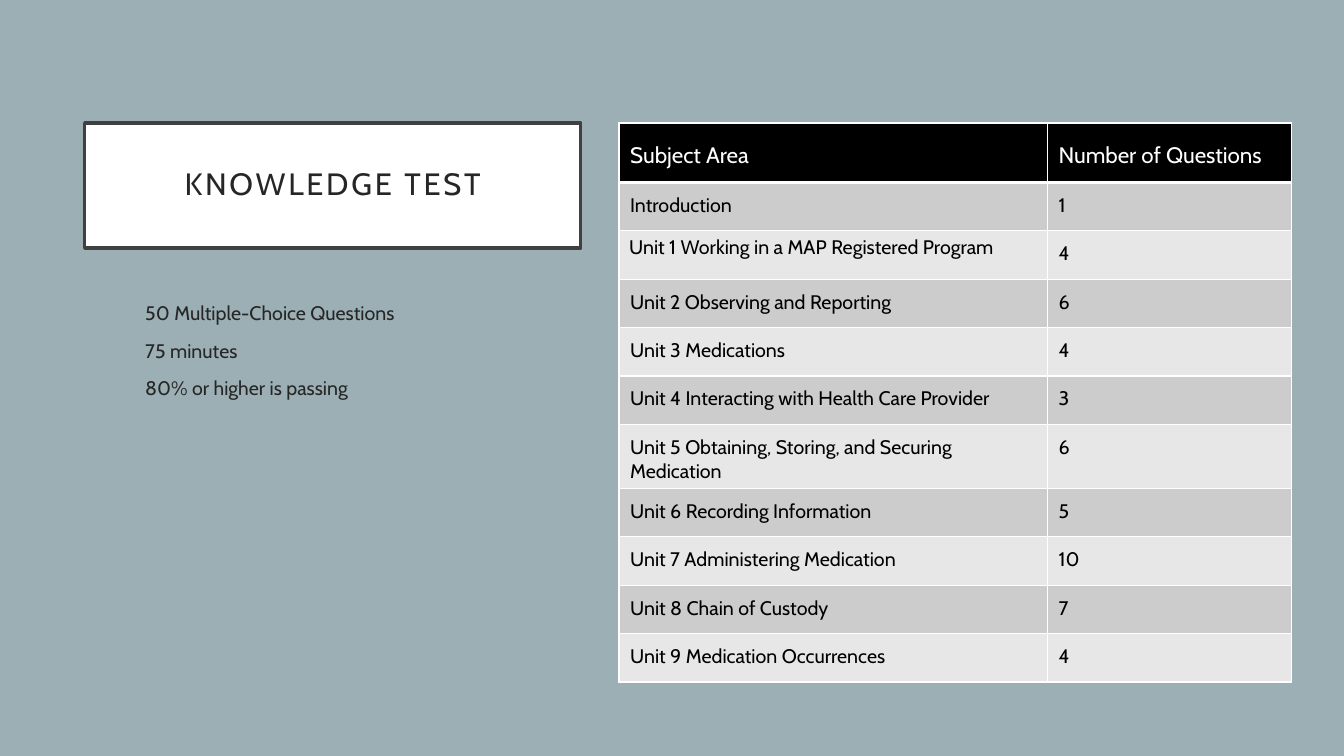
from dataclasses import dataclass

from lxml import etree
from pptx import Presentation
from pptx.dml.color import RGBColor
from pptx.enum import shapes, text
from pptx.oxml.ns import qn
from pptx.util import Inches, Pt


@dataclass(frozen=True)
class Theme:
    font: str = "Cabin"
    background: str = "9BAFB5"
    ink: str = "262626"
    frame: str = "404040"
    white: str = "FFFFFF"
    black: str = "000000"
    bands: tuple = ("CCCCCC", "E7E7E7")
    title_size: int = 22
    header_size: int = 16
    body_size: int = 14


theme = Theme()


def write(frame, lines, size, color, align=text.PP_ALIGN.LEFT,
          line_spacing=1.0, gap=0, tracking=0):
    """Fill a text frame; gap and tracking are in points."""
    frame.word_wrap = True
    for index, line in enumerate(lines):
        para = frame.paragraphs[0] if index == 0 else frame.add_paragraph()
        para.alignment = align
        para.line_spacing = line_spacing
        if index:
            para.space_before = Pt(gap)
        span = para.add_run()
        span.text = line
        span.font.name = theme.font
        span.font.size = Pt(size)
        span.font.bold = False
        span.font.color.rgb = RGBColor.from_string(color)
        if tracking:
            span._r.get_or_add_rPr().set("spc", str(tracking * 100))


def set_borders(cell, widths):
    """Draw white cell borders; widths maps L, R, T, B to points."""
    properties = cell._tc.get_or_add_tcPr()
    for side, width in widths.items():
        line = etree.SubElement(properties, qn(f"a:ln{side}"), w=str(Pt(width)))
        fill = etree.SubElement(line, qn("a:solidFill"))
        etree.SubElement(fill, qn("a:srgbClr"), val=theme.white)


deck = Presentation()
deck.slide_width = Inches(13.33)
deck.slide_height = Inches(7.5)
page = deck.slides.add_slide(deck.slide_layouts[6])
page.background.fill.solid()
page.background.fill.fore_color.rgb = RGBColor.from_string(theme.background)

# Title
title = page.shapes.add_shape(shapes.MSO_SHAPE.RECTANGLE, Inches(0.84),
                              Inches(1.22), Inches(4.92), Inches(1.24))
title.shadow.inherit = False
title.fill.solid()
title.fill.fore_color.rgb = RGBColor.from_string(theme.white)
title.line.color.rgb = RGBColor.from_string(theme.frame)
title.line.width = Pt(2.5)
frame = title.text_frame
frame.vertical_anchor = text.MSO_ANCHOR.MIDDLE
frame.margin_left = frame.margin_right = Inches(0.3)
frame.margin_top = frame.margin_bottom = Inches(0.2)
write(frame, ["KNOWLEDGE TEST"], theme.title_size, theme.ink,
      align=text.PP_ALIGN.CENTER, line_spacing=0.9, tracking=2)

# Test facts
facts = page.shapes.add_textbox(Inches(0.84), Inches(2.94), Inches(4.15), Inches(2.4))
facts.text_frame.margin_left = Inches(0.6)
write(facts.text_frame,
      ["50 Multiple-Choice Questions", "75 minutes", "80% or higher is passing"],
      theme.body_size, theme.ink, gap=10)

# Questions per subject
subjects = [
    ("Subject Area", "Number of Questions"),
    ("Introduction", "1"),
    ("Unit 1 Working in a MAP Registered Program", "4"),
    ("Unit 2 Observing and Reporting", "6"),
    ("Unit 3 Medications", "4"),
    ("Unit 4 Interacting with Health Care Provider", "3"),
    ("Unit 5 Obtaining, Storing, and Securing Medication", "6"),
    ("Unit 6 Recording Information", "5"),
    ("Unit 7 Administering Medication", "10"),
    ("Unit 8 Chain of Custody", "7"),
    ("Unit 9 Medication Occurrences", "4"),
]
table = page.shapes.add_table(len(subjects), 2, Inches(6.14), Inches(1.22),
                              Inches(6.67), Inches(5.4)).table
table.columns[0].width = Inches(4.25)
table.columns[1].width = Inches(2.42)

for row, values in enumerate(subjects):
    header = row == 0
    table.rows[row].height = Inches(0.59 if header else 0.48)
    for column, value in enumerate(values):
        cell = table.cell(row, column)
        set_borders(cell, {"L": 1, "R": 1, "T": 3 if row == 1 else 1,
                           "B": 3 if header else 1})
        cell.fill.solid()
        cell.fill.fore_color.rgb = RGBColor.from_string(
            theme.black if header else theme.bands[(row - 1) % 2])
        cell.vertical_anchor = text.MSO_ANCHOR.MIDDLE if header else text.MSO_ANCHOR.TOP
        tight = value.startswith("Unit 1 ")
        cell.margin_left = cell.margin_right = Inches(0.1 if tight else 0.11)
        cell.margin_top = Inches(0.05 if tight else 0.11)
        cell.margin_bottom = Inches(0.05 if tight else 0.06)
        write(cell.text_frame, [value],
              theme.header_size if header else theme.body_size,
              theme.white if header else theme.black)

deck.save("out.pptx")
